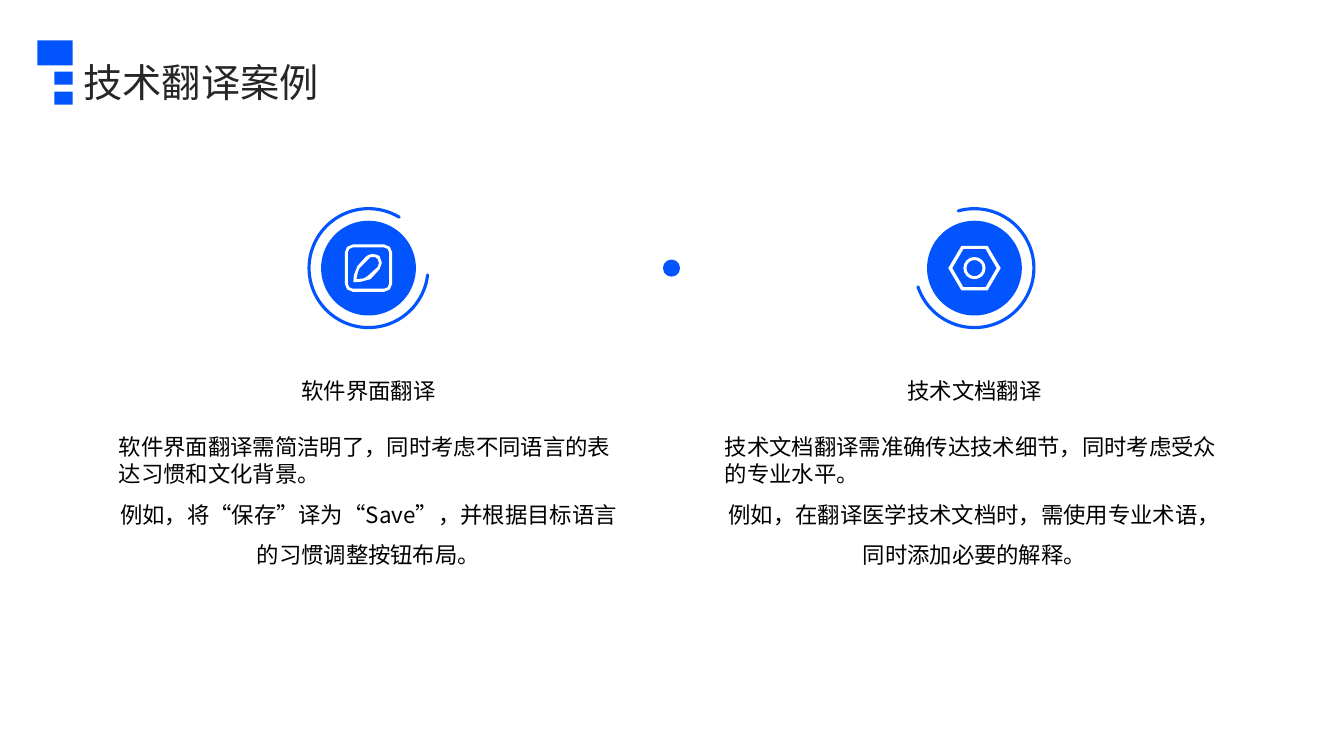
import math
from lxml import etree
from pptx import Presentation
from pptx import util as u
from pptx.dml.color import RGBColor
from pptx.enum import shapes, text
from pptx.oxml.ns import qn

FONT = "Noto Sans CJK SC"
BLUE, WHITE, BLACK, DARK = "0254FE", "FFFFFF", "000000", "262626"
LEFT, CENTER = text.PP_ALIGN.LEFT, text.PP_ALIGN.CENTER
KIND = shapes.MSO_SHAPE

TITLE = "技术翻译案例"
COLUMNS = [
    {"heading": "软件界面翻译",
     "body": ["软件界面翻译需简洁明了，同时考虑不同语言的表达习惯和文化背景。",
              "例如，将“保存”译为“Save”，并根据目标语言的习惯调整按钮布局。"],
     "icon": "pencil", "arc": (3.94, 180.65)},
    {"heading": "技术文档翻译",
     "body": ["技术文档翻译需准确传达技术细节，同时考虑受众的专业水平。",
              "例如，在翻译医学技术文档时，需使用专业术语，同时添加必要的解释。"],
     "icon": "nut", "arc": (152.55, 96.95)},
]

MARKS = [(0.37, 0.4, 0.35, 0.25), (0.54, 0.71, 0.18, 0.13), (0.54, 0.91, 0.18, 0.13)]
COLUMN_LEFT, COLUMN_WIDTH, COLUMN_STEP = 1.18, 4.95, 6.01
ICON_Y, DISC, RING, DOT = 2.66, 0.94, 1.18, 0.17
LINE_FACTOR = 1.2

PENCIL_INNER = [
    (0.04, -0.11), (0.03, -0.11, 0.01, -0.11, 0, -0.09), (-0.09, 0),
    (-0.1, 0.01, -0.11, 0.06, -0.12, 0.11), (-0.07, 0.11, -0.02, 0.1, -0.01, 0.08),
    (0.09, -0.01), (0.11, -0.03, 0.11, -0.07, 0.09, -0.09),
    (0.08, -0.11, 0.06, -0.11, 0.04, -0.11)]
PENCIL_OUTER = [
    (0.04, -0.14), (0.07, -0.14, 0.09, -0.13, 0.11, -0.12),
    (0.14, -0.08, 0.14, -0.02, 0.11, 0.01), (0.02, 0.11),
    (-0.02, 0.14, -0.15, 0.14, -0.15, 0.14), (-0.15, 0.14, -0.15, 0.01, -0.11, -0.02),
    (-0.02, -0.12), (0, -0.13, 0.02, -0.14, 0.04, -0.14)]


def color(value):
    return RGBColor.from_string(value)


def curve(steps, parts=2):
    points = [steps[0]]
    for step in steps[1:]:
        if len(step) == 2:
            points.append(step)
            continue
        knots = [points[-1], step[:2], step[2:4], step[4:]]
        for i in range(1, parts + 1):
            t = i / parts
            weights = [(1 - t) ** 3, 3 * t * (1 - t) ** 2, 3 * t * t * (1 - t), t ** 3]
            points.append(tuple(sum(w * k[axis] for w, k in zip(weights, knots))
                                for axis in (0, 1)))
    return points


def polar(radius, degrees):
    angle = math.radians(degrees)
    return radius * math.cos(angle), radius * math.sin(angle)


def circle(radius, count=16):
    return [polar(radius, 360 * i / count) for i in range(count)]


def rounded_square(half, radius):
    middle = half - radius
    corners = [(1, 1), (-1, 1), (-1, -1), (1, -1)]
    return [(sx * middle + dx, sy * middle + dy)
            for i, (sx, sy) in enumerate(corners)
            for dx, dy in [polar(radius, 90 * i + turn) for turn in (0, 45, 90)]]


def hexagon(half_width, half_top, half_height):
    return [(-half_width, 0), (-half_top, -half_height), (half_top, -half_height),
            (half_width, 0), (half_top, half_height), (-half_top, half_height)]


ICONS = {
    "pencil": [rounded_square(0.47 / 2, 0.08), rounded_square(0.41 / 2, 0.05),
               curve(PENCIL_OUTER), curve(PENCIL_INNER)],
    "nut": [hexagon(0.26, 0.13, 0.22), hexagon(0.22, 0.11, 0.19),
            circle(0.11), circle(0.08)],
}


def paint(shape, fill):
    shape.shadow.inherit = False
    shape.fill.solid()
    shape.fill.fore_color.rgb = color(fill)
    shape.line.fill.background()


def add_shape(slide, kind, box, fill=BLUE):
    shape = slide.shapes.add_shape(kind, *map(u.Inches, box))
    paint(shape, fill)
    return shape


def centered(x, y, size):
    return x - size / 2, y - size / 2, size, size


def add_arc(slide, x, adjustments):
    arc = add_shape(slide, KIND.ARC, centered(x, ICON_Y, RING))
    arc.fill.background()
    arc.line.color.rgb = color(BLUE)
    arc.line.width = u.Pt(2.25)
    arc._element.spPr.find(qn("a:ln")).set("cap", "rnd")
    for i, adjustment in enumerate(adjustments):
        arc.adjustments[i] = adjustment


def add_icon(slide, x, contours):
    placed = [[(u.Inches(x + px), u.Inches(ICON_Y + py)) for px, py in contour]
              for contour in contours]
    builder = slide.shapes.build_freeform(*placed[0][0], scale=1.0)
    for i, contour in enumerate(placed):
        if i:
            builder.move_to(*contour[0])
        builder.add_line_segments(contour[1:], close=True)
    paint(builder.convert_to_shape(), WHITE)


def write(holder, box, lines, size, fill, anchor):
    holder.left, holder.top, holder.width, holder.height = map(u.Inches, box)
    frame = holder.text_frame
    frame.word_wrap = True
    frame.auto_size = text.MSO_AUTO_SIZE.NONE
    frame.vertical_anchor = anchor
    frame.margin_left = frame.margin_top = frame.margin_right = frame.margin_bottom = 0
    for i, (words, align, spacing) in enumerate(lines):
        paragraph = frame.add_paragraph() if i else frame.paragraphs[0]
        paragraph.text = words
        paragraph.alignment = align
        paragraph.line_spacing = u.Pt(round(size * LINE_FACTOR * spacing, 1))
        paragraph.space_before = paragraph.space_after = u.Pt(0)
        font = paragraph.font
        font.name, font.size, font.bold = FONT, u.Pt(size), False
        font.color.rgb = color(fill)
        properties = paragraph._p.get_or_add_pPr()
        properties.set("marL", "0")
        properties.set("indent", "0")
        defaults = properties.find(qn("a:defRPr"))
        etree.SubElement(defaults, qn("a:ea")).set("typeface", FONT)
        defaults.addprevious(etree.Element(qn("a:buNone")))


def main():
    presentation = Presentation()
    presentation.slide_width, presentation.slide_height = u.Inches(13.33), u.Inches(7.5)
    slide = presentation.slides.add_slide(presentation.slide_layouts[4])
    title, *holders = slide.placeholders
    middle, top = text.MSO_ANCHOR.MIDDLE, text.MSO_ANCHOR.TOP

    write(title, (0.83, 0.53, 11.88, 0.51), [(TITLE, LEFT, 1.1)], 28, DARK, middle)
    for box in MARKS:
        add_shape(slide, KIND.RECTANGLE, box)

    for i, column in enumerate(COLUMNS):
        left = COLUMN_LEFT + i * COLUMN_STEP
        x = left + COLUMN_WIDTH / 2
        heading, body = holders[2 * i:2 * i + 2]
        write(heading, (left, 3.38, COLUMN_WIDTH, 0.91),
              [(column["heading"], CENTER, 1.3)], 16, BLACK, middle)
        intro, example = column["body"]
        write(body, (left, 4.3, COLUMN_WIDTH, 1.57),
              [(intro, LEFT, 1), (example, CENTER, 1.5)], 16, BLACK, top)
        add_arc(slide, x, column["arc"])
        add_shape(slide, KIND.OVAL, centered(x, ICON_Y, DISC))
        add_icon(slide, x, ICONS[column["icon"]])

    dot_x = COLUMN_LEFT + (COLUMN_WIDTH + COLUMN_STEP) / 2
    add_shape(slide, KIND.OVAL, centered(dot_x, ICON_Y, DOT))
    presentation.save("out.pptx")


if __name__ == "__main__":
    main()
